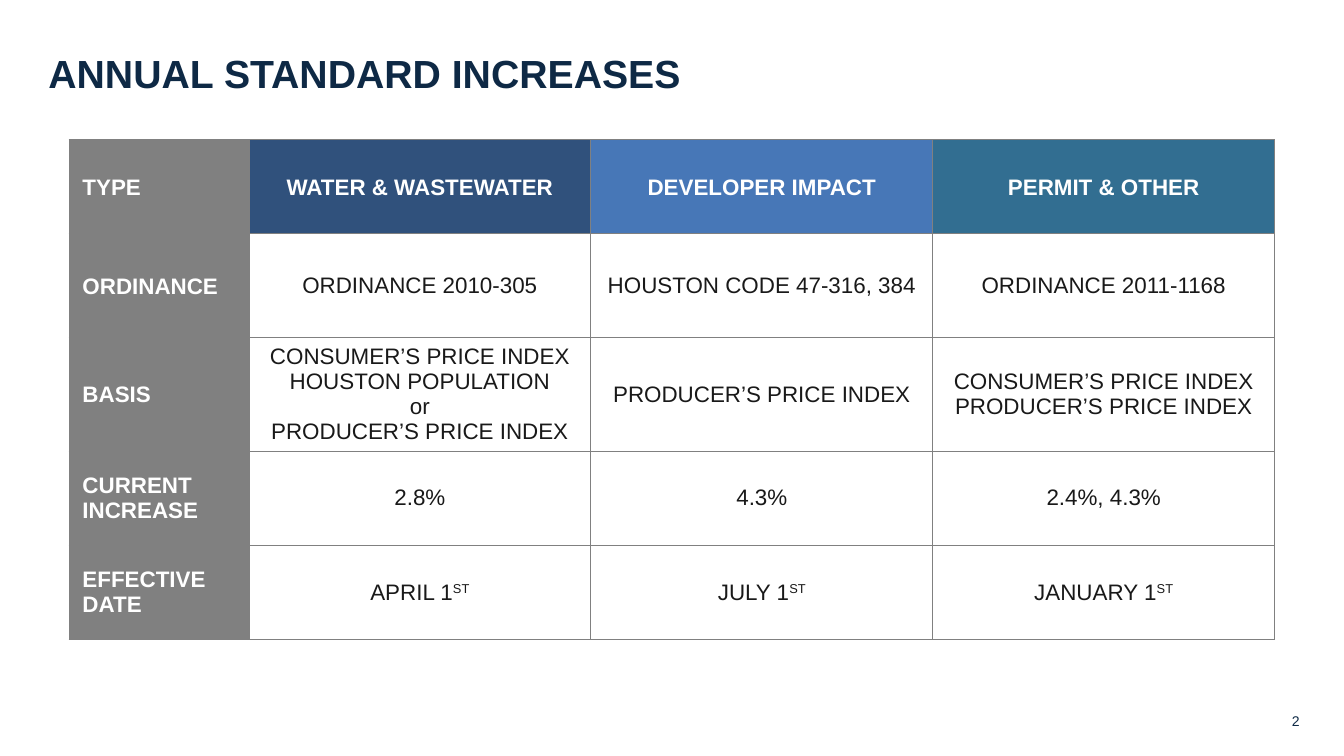
from lxml import etree
from pptx import Presentation
from pptx.dml.color import RGBColor
from pptx.enum.text import MSO_ANCHOR, MSO_AUTO_SIZE, PP_ALIGN
from pptx.oxml.ns import qn
from pptx.util import Pt

LEFT, CENTER, RIGHT = PP_ALIGN.LEFT, PP_ALIGN.CENTER, PP_ALIGN.RIGHT
TOP, MIDDLE = MSO_ANCHOR.TOP, MSO_ANCHOR.MIDDLE
NO_AUTOFIT = MSO_AUTO_SIZE.NONE

NAVY = RGBColor(0x0E, 0x29, 0x45)
INK = RGBColor(0x19, 0x19, 0x19)
WHITE = RGBColor(0xFF, 0xFF, 0xFF)
GRAY = RGBColor(0x80, 0x80, 0x80)
HEADER_FILLS = [
    GRAY,
    RGBColor(0x30, 0x51, 0x7C),
    RGBColor(0x47, 0x77, 0xB7),
    RGBColor(0x32, 0x6E, 0x91),
]

FONT = "Arial"
SUPERSCRIPT = "30000"
BORDER_WIDTH = Pt(0.5)
COLUMN_WIDTHS = [96.4, 183.2, 183.2, 183.2]
ROW_HEIGHTS = [50.4, 55.5, 50.4, 50.4, 50.4]
CONSUMER = "CONSUMER’S PRICE INDEX"
PRODUCER = "PRODUCER’S PRICE INDEX"
ROWS = [
    ["TYPE", "WATER & WASTEWATER", "DEVELOPER IMPACT", "PERMIT & OTHER"],
    ["ORDINANCE", "ORDINANCE 2010-305", "HOUSTON CODE 47-316, 384", "ORDINANCE 2011-1168"],
    ["BASIS", f"{CONSUMER}\nHOUSTON POPULATION\nor\n{PRODUCER}", PRODUCER, f"{CONSUMER}\n{PRODUCER}"],
    ["CURRENT INCREASE", "2.8%", "4.3%", "2.4%, 4.3%"],
    ["EFFECTIVE DATE", "APRIL 1^ST", "JULY 1^ST", "JANUARY 1^ST"],
]


def write_text(frame, text, *, size, color, bold=False, align=LEFT, spacing=1.0):
    for index, line in enumerate(text.split("\n")):
        para = frame.add_paragraph() if index else frame.paragraphs[0]
        para.alignment = align
        para.line_spacing = spacing
        for part, words in enumerate(line.split("^")):
            span = para.add_run()
            span.text = words
            span.font.name = FONT
            span.font.size = Pt(size)
            span.font.bold = bold
            span.font.color.rgb = color
            if part:
                span._r.get_or_add_rPr().set("baseline", SUPERSCRIPT)


def add_borders(cell):
    properties = cell._tc.get_or_add_tcPr()
    for side in ("a:lnL", "a:lnR", "a:lnT", "a:lnB"):
        line = etree.SubElement(properties, qn(side), w=str(BORDER_WIDTH))
        fill = etree.SubElement(line, qn("a:solidFill"))
        etree.SubElement(fill, qn("a:srgbClr"), val=str(GRAY))


def place_title(page, left, top, width, height):
    title = page.shapes.title
    title.left, title.top, title.width, title.height = Pt(left), Pt(top), Pt(width), Pt(height)
    frame = title.text_frame
    frame.word_wrap = True
    frame.auto_size = NO_AUTOFIT
    frame.vertical_anchor = TOP
    write_text(frame, "ANNUAL STANDARD INCREASES", size=21, color=NAVY, bold=True)


def place_increase_table(page, left, top, width, height):
    table = page.shapes.add_table(
        len(ROWS), len(COLUMN_WIDTHS), Pt(left), Pt(top), Pt(width), Pt(height)
    ).table
    table.first_row = False
    table.horz_banding = False
    for column, share in zip(table.columns, COLUMN_WIDTHS):
        column.width = Pt(width * share / sum(COLUMN_WIDTHS))
    for row, share in zip(table.rows, ROW_HEIGHTS):
        row.height = Pt(height * share / sum(ROW_HEIGHTS))

    for row_index, texts in enumerate(ROWS):
        for column_index, text in enumerate(texts):
            cell = table.cell(row_index, column_index)
            heading = row_index == 0 or column_index == 0
            cell.vertical_anchor = MIDDLE
            add_borders(cell)
            if heading:
                cell.fill.solid()
                cell.fill.fore_color.rgb = HEADER_FILLS[column_index]
            else:
                cell.fill.background()
            write_text(
                cell.text_frame,
                text,
                size=12,
                color=WHITE if heading else INK,
                bold=heading,
                align=CENTER if column_index else LEFT,
                spacing=1.07 if heading and row_index < 3 else 1.0,
            )


def place_page_number(page, left, top, width, height):
    box = page.shapes.add_textbox(Pt(left), Pt(top), Pt(width), Pt(height))
    frame = box.text_frame
    frame.word_wrap = True
    frame.vertical_anchor = MIDDLE
    write_text(frame, "2", size=7.5, color=NAVY, align=RIGHT)


def main():
    deck = Presentation()
    deck.slide_width, deck.slide_height = Pt(720), Pt(405)
    page = deck.slides.add_slide(deck.slide_layouts[5])
    place_increase_table(page, 37, 74.8, sum(COLUMN_WIDTHS), sum(ROW_HEIGHTS))
    place_title(page, 18.7, 23, 645.8, 32.4)
    place_page_number(page, 541.4, 378.9, 162, 14.4)
    deck.save("out.pptx")


if __name__ == "__main__":
    main()
